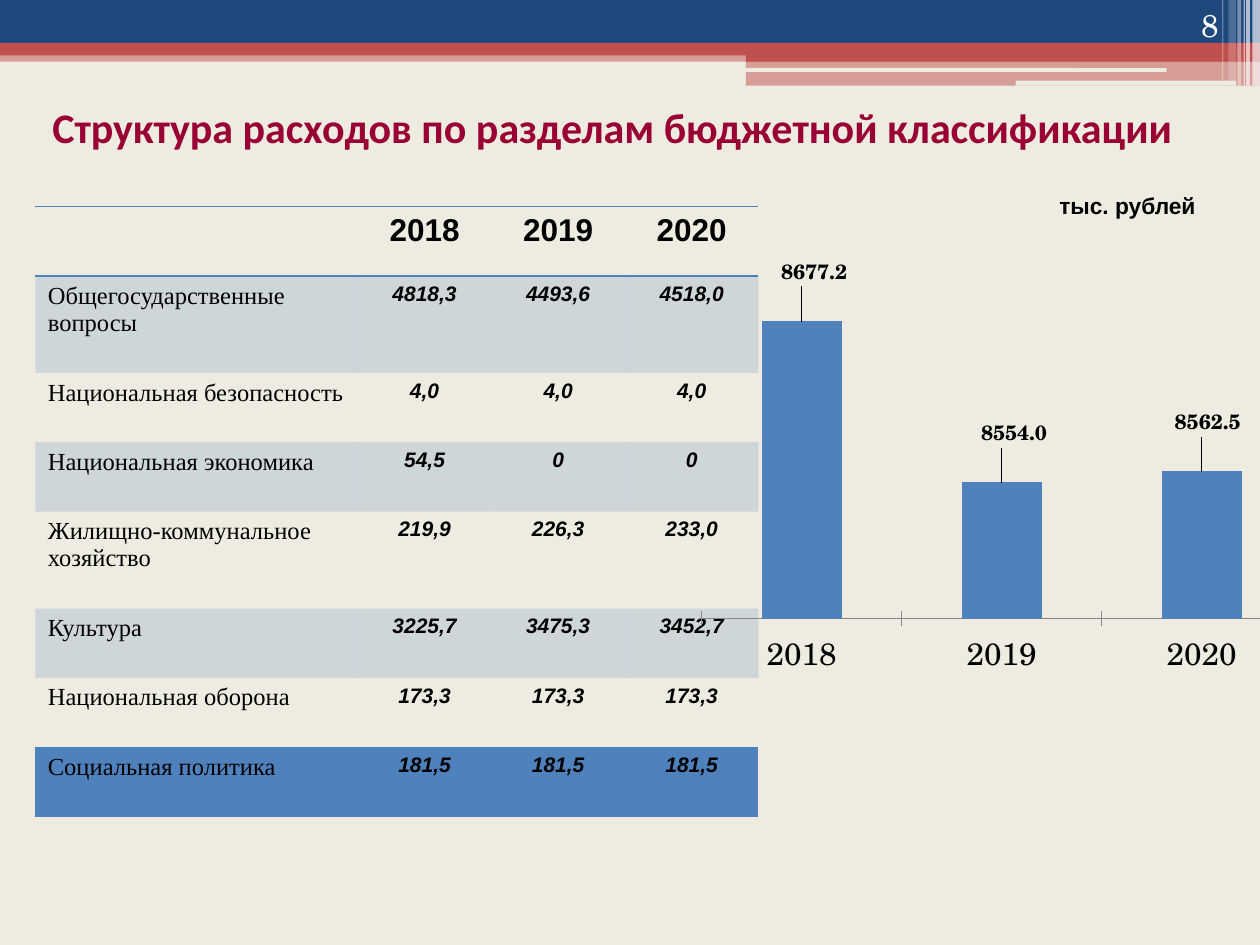
from lxml.etree import SubElement
from pptx import Presentation
from pptx.chart.data import CategoryChartData
from pptx.dml.color import RGBColor
from pptx.enum.chart import XL_CHART_TYPE as ChartType, XL_TICK_MARK as Tick
from pptx.enum.shapes import MSO_SHAPE as Preset
from pptx.enum.text import MSO_ANCHOR as Anchor, PP_ALIGN as Align
from pptx.oxml import parse_xml
from pptx.oxml.ns import nsdecls, qn
from pptx.util import Inches, Pt

COLORS = {"paper": "EEECE1", "navy": "1F497D", "red": "C0504D", "blue": "4F81BD",
          "white": "FFFFFF", "black": "000000", "crimson": "990033", "axis": "878787"}
GRID_COLUMNS, GRID_ROWS = 100, 75
UNIT = Inches(0.1)

BANDS = [
    ((0, 4, 100, 0.9), "red", 50),
    ((0, 0, 100, 3.4), "navy", 100),
    ((0, 3.4, 100, 1), "red", 100),
    ((59.2, 3.9, 40.8, 1), "red", 100),
    ((59.2, 4.8, 40.8, 2), "red", 50),
]
SLOTS = [((59.1, 5.4, 33.5, 0.3), "paper", 100), ((80.6, 6.4, 17.5, 0.4), "paper", 100)]
STRIPES = [(99.4, 0.6, 6.8, 65), (98.9, 0.3, 6.8, 65), (98.7, 0.1, 6.8, 60),
           (98.2, 0.3, 6.8, 40), (97.5, 0.6, 6.4, 20), (97, 0.1, 6.4, 30)]

YEARS = ["2018", "2019", "2020"]
EXPENSES = [
    ("Общегосударственные вопросы", "4818,3", "4493,6", "4518,0"),
    ("Национальная безопасность", "4,0", "4,0", "4,0"),
    ("Национальная экономика", "54,5", "0", "0"),
    ("Жилищно-коммунальное хозяйство", "219,9", "226,3", "233,0"),
    ("Культура", "3225,7", "3475,3", "3452,7"),
    ("Национальная оборона", "173,3", "173,3", "173,3"),
    ("Социальная политика", "181,5", "181,5", "181,5"),
]
TOTALS = [8677.2, 8554.0, 8562.5]
LABEL_SHIFTS = [(0.02, -0.07), (0.02, -0.07), (0.01, -0.07)]
TABLE_BOX = (2.8, 16.4, 57.4, 48.4)
COLUMN_WIDTHS = [25.6, 10.6, 10.6, 10.6]
ROW_HEIGHT, TALL_ROW_HEIGHT, TALL_ROWS = 5.5, 7.7, (1, 4)
CHART_BOX = (54.7, 20.2, 49.6, 33.9)
PLOT_SHARE = {"x": 0.02, "y": 0.07, "w": 0.96, "h": 0.78}

HEADER = {"size": Pt(18), "name": "Arial", "bold": True}
SECTION = {"size": Pt(14), "name": "Times New Roman", "bold": False}
AMOUNT = {"size": Pt(12), "name": "Arial", "bold": True, "italic": True}
CHART_FONT = {"size": Pt(18), "name": "TeX Gyre Schola"}
LABEL_FONT = {"size": Pt(12), "name": "TeX Gyre Schola", "bold": True}

TEXTS = [
    ("Структура расходов по разделам бюджетной классификации", (0, 7.6, 97.2, 5), Align.CENTER,
     Anchor.TOP, "crimson", {"size": Pt(24), "name": "Calibri", "bold": True}),
    ("8", (89.4, 0, 8.3, 4), Align.RIGHT, Anchor.BOTTOM, "white", CHART_FONT),
    ("тыс. рублей", (83.1, 14.7, 15, 3.2), Align.LEFT, Anchor.TOP, "black",
     {"size": Pt(13), "name": "Arial", "bold": True}),
]


def rgb(name):
    return RGBColor.from_string(COLORS[name])


def place(box):
    return [round(length * UNIT) for length in box]


def style_font(font, style, color="black"):
    for attribute, value in style.items():
        setattr(font, attribute, value)
    font.color.rgb = rgb(color)


def paint(fill, color, opacity=100):
    fill.solid()
    fill.fore_color.rgb = rgb(color)
    if opacity < 100:
        color_node = next(fill._xPr.iter(qn("a:srgbClr")))
        SubElement(color_node, qn("a:alpha"), val=str(opacity * 1000))


def write(frame, text, style, alignment, color="black"):
    paragraph = frame.paragraphs[0]
    paragraph.alignment = alignment
    run = paragraph.add_run()
    run.text = text
    style_font(run.font, style, color)


def add_block(slide, preset, box, color, opacity):
    shape = slide.shapes.add_shape(preset, *place(box))
    shape.shadow.inherit = False
    paint(shape.fill, color, opacity)
    shape.line.fill.background()


def add_border(cell, side):
    properties = cell._tc.get_or_add_tcPr()
    line = SubElement(properties, qn(f"a:ln{side}"), w=str(Pt(1)))
    solid = SubElement(line, qn("a:solidFill"))
    SubElement(solid, qn("a:srgbClr"), val=COLORS["blue"])


def add_expense_table(slide):
    rows = [("", *YEARS), *EXPENSES]
    table = slide.shapes.add_table(len(rows), len(COLUMN_WIDTHS), *place(TABLE_BOX)).table
    table._tbl.tblPr.find(qn("a:tableStyleId")).text = "{2D5ABB26-0587-4C30-8999-92F81FD0307C}"
    for column, width in zip(table.columns, COLUMN_WIDTHS):
        column.width = round(width * UNIT)
    for r, values in enumerate(rows):
        height = TALL_ROW_HEIGHT if r in TALL_ROWS else ROW_HEIGHT
        table.rows[r].height = round(height * UNIT)
        sides = {0: "TB", len(rows) - 1: "B"}.get(r, "")
        for c, value in enumerate(values):
            cell = table.cell(r, c)
            for side in sides:
                add_border(cell, side)
            if r % 2:
                paint(cell.fill, "blue", 20)
            else:
                cell.fill.background()
            if value:
                style = HEADER if r == 0 else AMOUNT if c else SECTION
                write(cell.text_frame, value, style, Align.CENTER if c else Align.LEFT)


def layout_xml(shares, modes=""):
    values = "".join(f'<c:{key} val="{value}"/>' for key, value in shares.items())
    return parse_xml(f'<c:layout {nsdecls("c")}><c:manualLayout>{modes}{values}'
                     '</c:manualLayout></c:layout>')


def add_totals_chart(slide):
    data = CategoryChartData(number_format="0.0")
    data.categories = YEARS
    data.add_series("Series 1", TOTALS)
    chart = slide.shapes.add_chart(ChartType.COLUMN_CLUSTERED, *place(CHART_BOX), data).chart
    chart.has_legend = chart.has_title = False
    style_font(chart.font, CHART_FONT)

    axis = chart.value_axis
    for attribute, value in {"minimum_scale": 8450, "maximum_scale": 8700, "visible": False,
                             "has_major_gridlines": False}.items():
        setattr(axis, attribute, value)
    axis.tick_labels.number_format = "0.0"
    axis.tick_labels.number_format_is_linked = False
    chart.category_axis.major_tick_mark = Tick.CROSS
    chart.category_axis.format.line.color.rgb = rgb("axis")

    plot = chart.plots[0]
    plot.gap_width = 150
    plot.vary_by_categories = False
    series = plot.series[0]
    paint(series.format.fill, "blue")
    labels = series.data_labels
    labels.show_value = True
    style_font(labels.font, LABEL_FONT)
    for index, (x, y) in enumerate(LABEL_SHIFTS):
        label = series.points[index].data_label
        style_font(label.font, LABEL_FONT)
        label._dLbl.find(qn("c:idx")).addnext(layout_xml({"x": x, "y": y}))

    modes = ('<c:layoutTarget val="inner"/><c:xMode val="edge"/><c:yMode val="edge"/>')
    area = chart._chartSpace.chart.plotArea
    for old_layout in area.findall(qn("c:layout")):
        area.remove(old_layout)
    area.insert(0, layout_xml(PLOT_SHARE, modes))


def main():
    presentation = Presentation()
    presentation.slide_width = GRID_COLUMNS * UNIT
    presentation.slide_height = GRID_ROWS * UNIT
    slide = presentation.slides.add_slide(presentation.slide_layouts[6])
    paint(slide.background.fill, "paper")

    stripes = [((x, 0, width, height), "white", opacity) for x, width, height, opacity in STRIPES]
    for preset, blocks in [(Preset.RECTANGLE, BANDS), (Preset.ROUNDED_RECTANGLE, SLOTS),
                           (Preset.RECTANGLE, stripes)]:
        for block in blocks:
            add_block(slide, preset, *block)

    add_expense_table(slide)
    for text, box, alignment, anchor, color, style in TEXTS:
        frame = slide.shapes.add_textbox(*place(box)).text_frame
        frame.word_wrap = True
        frame.vertical_anchor = anchor
        write(frame, text, style, alignment, color)
    add_totals_chart(slide)
    presentation.save("out.pptx")


if __name__ == "__main__":
    main()
